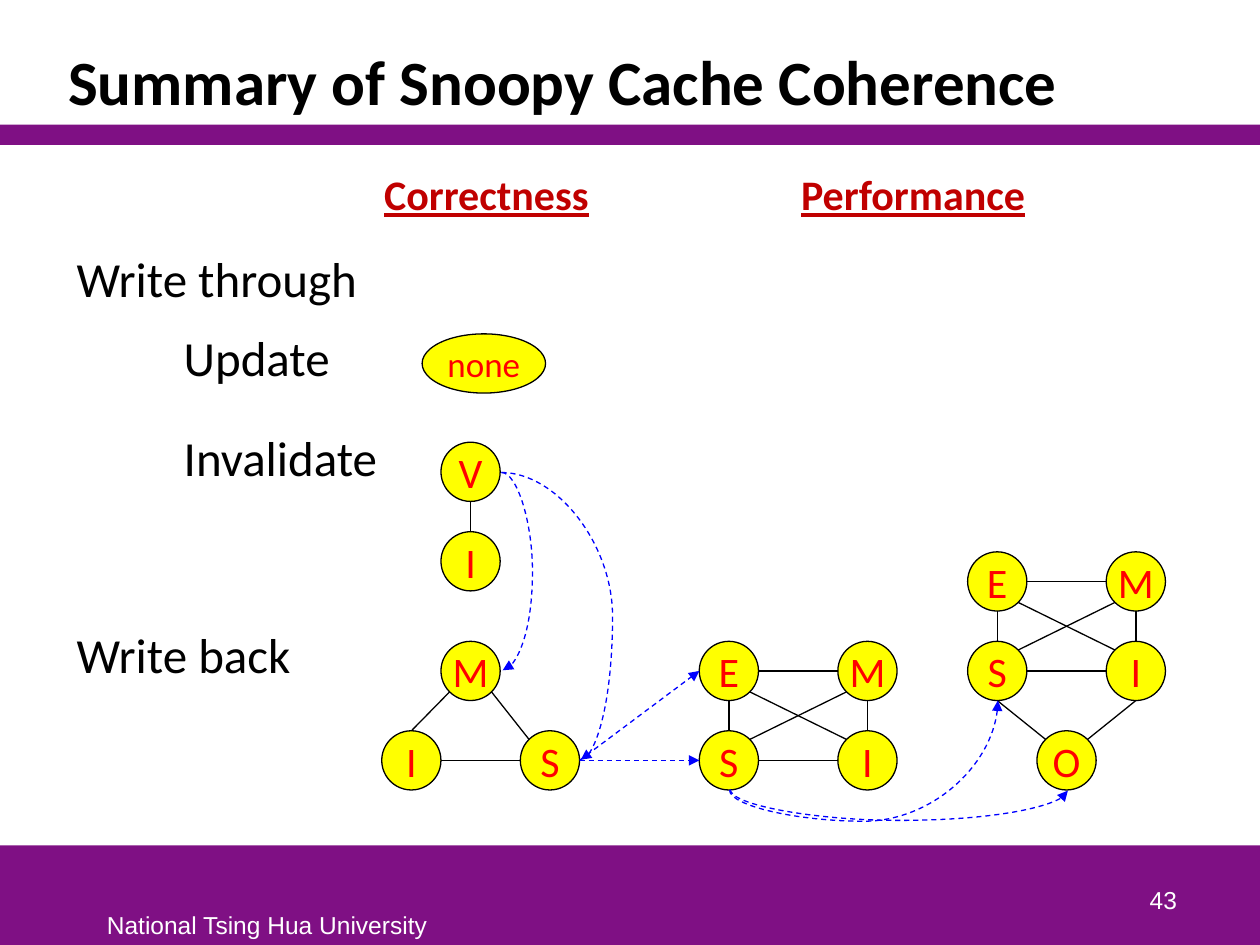
from dataclasses import dataclass
from math import sqrt

from lxml.etree import SubElement
from pptx import Presentation
from pptx.dml.color import RGBColor
from pptx.enum.dml import MSO_LINE
from pptx.enum.shapes import MSO_CONNECTOR, MSO_SHAPE
from pptx.enum.text import MSO_ANCHOR, MSO_AUTO_SIZE, PP_ALIGN
from pptx.oxml.ns import qn
from pptx.util import Inches, Pt

COLORS = {
    "band": "7F1084", "state": "FFFF00", "state_text": "FF0000", "heading": "C00000",
    "evolution": "0000FF", "black": "000000", "white": "FFFFFF",
}
SIZE = 0.47
DIAG = sqrt(0.5)
SITES = {
    "top": (0, -1), "bottom": (0, 1), "left": (-1, 0), "right": (1, 0),
    "tl": (-DIAG, -DIAG), "tr": (DIAG, -DIAG), "bl": (-DIAG, DIAG), "br": (DIAG, DIAG),
}


@dataclass
class State:
    name: str
    x: float
    y: float
    w: float = SIZE
    size: int = 24

    def site(self, name: str) -> tuple[float, float]:
        dx, dy = SITES[name]
        return self.x + self.w / 2 * (1 + dx), self.y + SIZE / 2 * (1 + dy)


@dataclass
class Link:
    start: State
    start_site: str
    end: State
    end_site: str


@dataclass
class Curve:
    x: float
    y: float
    w: float
    h: float
    bend: float
    rotation: int = 0
    flips: str = ""


@dataclass
class Label:
    text: str
    x: float
    y: float
    w: float
    h: float = 0.57
    size: int = 28
    color: str = "black"
    font: str = "Calibri"
    bold: bool = False
    underline: bool = False


def rgb(name: str) -> RGBColor:
    return RGBColor.from_string(COLORS[name])


def write(tf, text: str, *, size: int, color: str = "black", font: str = "Calibri",
          bold: bool = False, underline: bool = False, align=PP_ALIGN.LEFT,
          anchor=MSO_ANCHOR.TOP, wrap: bool = True, fit=MSO_AUTO_SIZE.NONE) -> None:
    tf.word_wrap = wrap
    tf.auto_size = fit
    tf.vertical_anchor = anchor
    p = tf.paragraphs[0]
    p.alignment = align
    r = p.add_run()
    r.text = text
    r.font.name, r.font.size, r.font.bold = font, Pt(size), bold
    r.font.underline = underline
    r.font.color.rgb = rgb(color)


def add_label(s, label: Label) -> None:
    box = s.shapes.add_textbox(*map(Inches, (label.x, label.y, label.w, label.h)))
    write(box.text_frame, label.text, size=label.size, color=label.color, font=label.font,
          bold=label.bold, underline=label.underline, wrap=False,
          fit=MSO_AUTO_SIZE.SHAPE_TO_FIT_TEXT)


def add_band(s, y: float, h: float) -> None:
    sp = s.shapes.add_shape(MSO_SHAPE.RECTANGLE, 0, Inches(y), Inches(10), Inches(h))
    sp.shadow.inherit = False
    sp.fill.solid()
    sp.fill.fore_color.rgb = rgb("band")
    sp.line.fill.background()


def add_state(s, state: State) -> None:
    sp = s.shapes.add_shape(MSO_SHAPE.OVAL, *map(Inches, (state.x, state.y, state.w, SIZE)))
    sp.shadow.inherit = False
    sp.fill.solid()
    sp.fill.fore_color.rgb = rgb("state")
    sp.line.color.rgb = rgb("black")
    sp.line.width = Pt(0.75)
    tf = sp.text_frame
    tf.margin_left = tf.margin_right = tf.margin_top = tf.margin_bottom = 0
    write(tf, state.name, size=state.size, color="state_text", align=PP_ALIGN.CENTER,
          anchor=MSO_ANCHOR.MIDDLE, wrap=False)


def style_line(cxn, evolution: bool) -> None:
    SubElement(cxn._element.spPr, qn("a:effectLst"))
    cxn.line.width = Pt(0.75)
    cxn.line.color.rgb = rgb("evolution" if evolution else "black")
    if evolution:
        cxn.line.dash_style = MSO_LINE.DASH
        SubElement(cxn.line._get_or_add_ln(), qn("a:tailEnd"), type="triangle")


def add_link(s, link: Link, evolution: bool = False) -> None:
    ends = link.start.site(link.start_site) + link.end.site(link.end_site)
    cxn = s.shapes.add_connector(MSO_CONNECTOR.STRAIGHT, *map(Inches, ends))
    style_line(cxn, evolution)


def add_curve(s, curve: Curve) -> None:
    ends = (curve.x, curve.y, curve.x + curve.w, curve.y + curve.h)
    cxn = s.shapes.add_connector(MSO_CONNECTOR.CURVE, *map(Inches, ends))
    spPr = cxn._element.spPr
    xfrm = spPr.find(qn("a:xfrm"))
    if curve.rotation:
        xfrm.set("rot", str(curve.rotation * 60000))
    for flip in curve.flips:
        xfrm.set("flip" + flip.upper(), "1")
    guides = spPr.find(qn("a:prstGeom")).find(qn("a:avLst"))
    SubElement(guides, qn("a:gd"), name="adj1", fmla=f"val {round(curve.bend * 100000)}")
    style_line(cxn, True)


def square(x: float, y: float) -> tuple[list[State], list[Link]]:
    e, m = State("E", x, y), State("M", x + 1.1, y)
    sh, i = State("S", x, y + 0.71), State("I", x + 1.1, y + 0.71)
    links = [
        Link(e, "right", m, "left"), Link(sh, "right", i, "left"),
        Link(e, "bottom", sh, "top"), Link(m, "bottom", i, "top"),
        Link(sh, "tr", m, "bl"), Link(e, "br", i, "tl"),
    ]
    return [e, m, sh, i], links


def main() -> None:
    prs = Presentation()
    prs.slide_width, prs.slide_height = Inches(10), Inches(7.5)
    s = prs.slides.add_slide(prs.slide_layouts[5])

    title = s.shapes.title
    title.left, title.top, title.width, title.height = map(Inches, (0.44, 0.25, 8.97, 0.74))
    write(title.text_frame, "Summary of Snoopy Cache Coherence", size=36, bold=True,
          anchor=MSO_ANCHOR.BOTTOM)
    title.text_frame.paragraphs[0].line_spacing = 0.85

    add_band(s, 6.71, 0.79)
    add_band(s, 0.99, 0.16)
    heading = dict(h=0.5, size=24, color="heading", bold=True, underline=True)
    for label in (
        Label("National Tsing Hua University", 0.75, 7.17, 2.76, 0.33, 14, "white", "Arial"),
        Label("Write through", 0.51, 1.92, 2.54),
        Label("Write back", 0.51, 4.91, 1.92),
        Label("Update", 1.36, 2.55, 1.37),
        Label("Invalidate", 1.36, 3.34, 1.75),
        Label("Correctness", 2.95, 1.29, 1.84, **heading),
        Label("Performance", 6.26, 1.29, 2, **heading),
    ):
        add_label(s, label)
    number = s.shapes.add_textbox(*map(Inches, (7.36, 6.81, 2.08, 0.5)))
    write(number.text_frame, "43", size=14, color="white", font="Arial",
          align=PP_ALIGN.RIGHT, anchor=MSO_ANCHOR.BOTTOM)

    none = State("none", 3.35, 2.65, 0.98, 20)
    valid, invalid = State("V", 3.5, 3.51), State("I", 3.5, 4.22)
    msi_m, msi_i, msi_s = State("M", 3.5, 5.09), State("I", 3.03, 5.8), State("S", 4.13, 5.8)
    mesi, mesi_links = square(5.55, 5.09)
    moesi, moesi_links = square(7.68, 4.38)
    owned = State("O", 8.23, 5.8)

    for state in [none, valid, invalid, msi_m, msi_i, msi_s, *mesi, *moesi, owned]:
        add_state(s, state)
    for link in [
        Link(valid, "bottom", invalid, "top"),
        Link(msi_m, "bl", msi_i, "top"),
        Link(msi_m, "br", msi_s, "tl"),
        Link(msi_i, "right", msi_s, "left"),
        *mesi_links, *moesi_links,
        Link(moesi[2], "bottom", owned, "tl"),
        Link(moesi[3], "bottom", owned, "tr"),
    ]:
        add_link(s, link)
    for target in (mesi[0], mesi[2]):
        add_link(s, Link(msi_s, "right", target, "left"), evolution=True)
    for curve in (
        Curve(3.98, 3.75, 0.01, 1.57, 25),
        Curve(3.98, 3.75, 0.63, 2.28, 1.4),
        Curve(7.13, 4.93, 0.01, 2.68, 25, 270, "h"),
        Curve(6.5, 4.85, 0.71, 2.13, -0.35, 90, "hv"),
    ):
        add_curve(s, curve)

    prs.save("out.pptx")


if __name__ == "__main__":
    main()
